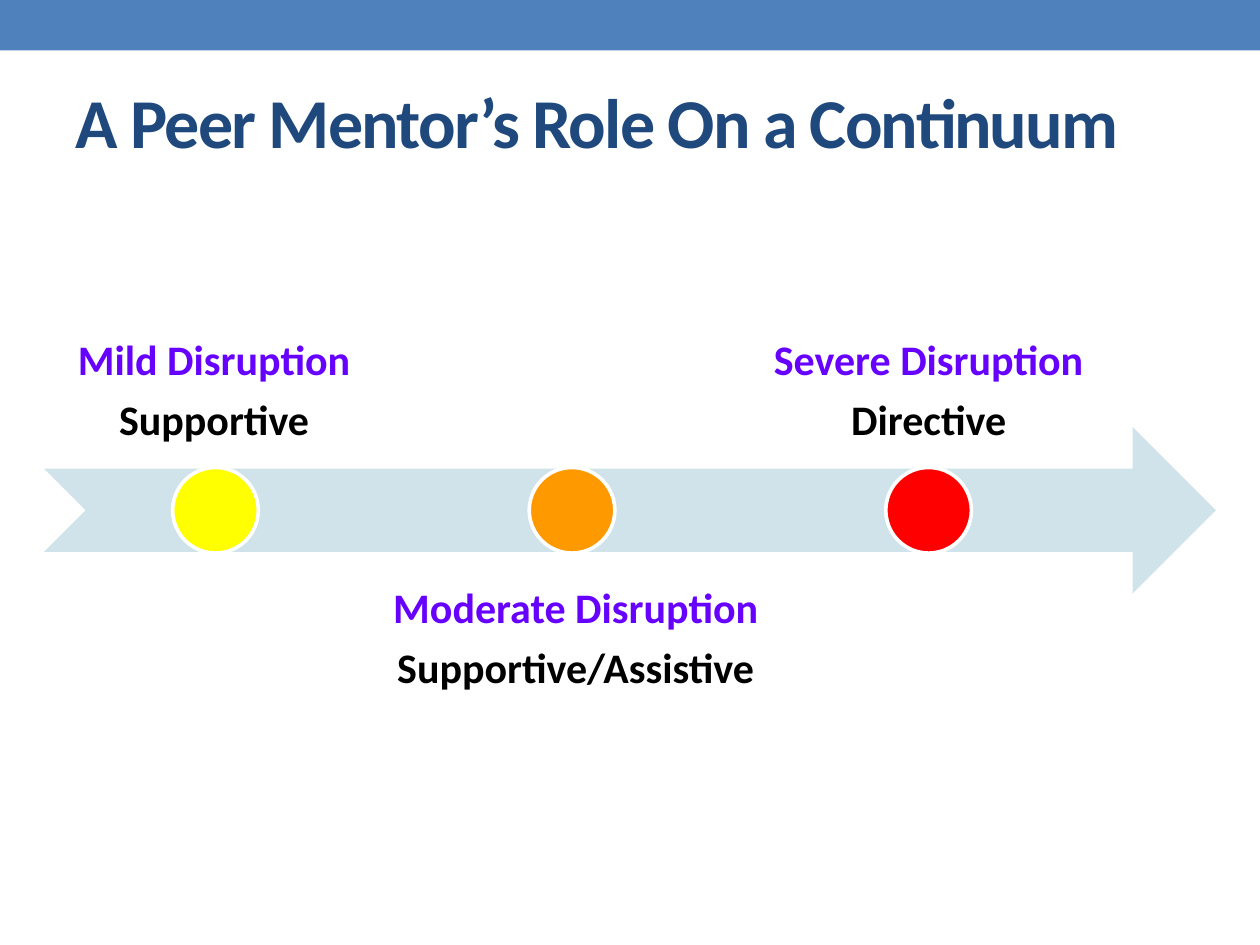
from dataclasses import dataclass, field

from pptx import Presentation
from pptx.dml.color import RGBColor
from pptx.enum.shapes import MSO_SHAPE
from pptx.enum.text import MSO_ANCHOR, MSO_AUTO_SIZE, PP_ALIGN
from pptx.util import Inches, Pt

RECTANGLE, ARROW, DOT = MSO_SHAPE.RECTANGLE, MSO_SHAPE.NOTCHED_RIGHT_ARROW, MSO_SHAPE.OVAL
TOP, MIDDLE, BOTTOM = MSO_ANCHOR.TOP, MSO_ANCHOR.MIDDLE, MSO_ANCHOR.BOTTOM
LEFT, CENTER = PP_ALIGN.LEFT, PP_ALIGN.CENTER
NO_AUTOFIT = MSO_AUTO_SIZE.NONE

WIDTH, HEIGHT = 10, 7.5
COLORS = {
    "band": "4F81BD", "title": "1F497D", "arrow": "D0E3EA", "outline": "FFFFFF",
    "level": "6600FF", "role": "000000",
    "mild": "FFFF00", "moderate": "FF9900", "severe": "FF0000",
}


def apply(target, values):
    for name, value in values.items():
        setattr(target, name, value)


@dataclass
class ContinuumSlide:
    slide: object
    font: str = "Calibri"
    label_format: dict = field(default_factory=lambda: {
        "alignment": CENTER, "line_spacing": 0.9, "space_after": Pt(8.4)})

    def box(self, left, top, width, height):
        return (Inches(left * WIDTH), Inches(top * HEIGHT),
                Inches(width * WIDTH), Inches(height * HEIGHT))

    def color(self, name):
        return RGBColor.from_string(COLORS[name])

    def add_text(self, paragraph, text, size, color):
        run = paragraph.add_run()
        run.text = text
        apply(run.font, {"name": self.font, "size": Pt(size), "bold": True})
        run.font.color.rgb = self.color(color)
        return run

    def title(self, text, area):
        heading = self.slide.shapes.title
        apply(heading, dict(zip(("left", "top", "width", "height"), self.box(*area))))
        apply(heading.text_frame, {
            "vertical_anchor": MIDDLE, "word_wrap": True, "auto_size": NO_AUTOFIT})
        paragraph = heading.text_frame.paragraphs[0]
        paragraph.alignment = LEFT
        run = self.add_text(paragraph, text, 40, "title")
        run._r.get_or_add_rPr().set("spc", "-100")

    def shape(self, kind, area, fill, outline=None):
        figure = self.slide.shapes.add_shape(kind, *self.box(*area))
        figure.shadow.inherit = False
        figure.fill.solid()
        figure.fill.fore_color.rgb = self.color(fill)
        if outline:
            figure.line.color.rgb = self.color(outline)
            figure.line.width = Pt(2.08)
        else:
            figure.line.fill.background()

    def label(self, level, role, area, anchor, inset):
        frame = self.slide.shapes.add_textbox(*self.box(*area)).text_frame
        apply(frame, {"word_wrap": True, "auto_size": NO_AUTOFIT, "vertical_anchor": anchor})
        apply(frame, dict.fromkeys(
            ("margin_left", "margin_top", "margin_right", "margin_bottom"), Inches(inset)))
        for paragraph, text, color in (
                (frame.paragraphs[0], level, "level"), (frame.add_paragraph(), role, "role")):
            apply(paragraph, self.label_format)
            self.add_text(paragraph, text, 24, color)


def main():
    deck = Presentation()
    deck.slide_width, deck.slide_height = Inches(WIDTH), Inches(HEIGHT)
    page = ContinuumSlide(deck.slides.add_slide(deck.slide_layouts[5]))

    page.shape(RECTANGLE, (0, 0, 1, 0.4 / HEIGHT), "band")
    page.title("A Peer Mentor’s Role On a Continuum",
               (0.05, 0.42 / HEIGHT, 0.9, 1.08 / HEIGHT))

    arrow_height = 1.32 / HEIGHT
    arrow_top = 3.39 / HEIGHT
    arrow_middle = arrow_top + arrow_height / 2
    page.shape(ARROW, (0.035, arrow_top, 0.93, arrow_height), "arrow")

    above = (2.4 / HEIGHT, BOTTOM, 0.19)
    below = (4.5 / HEIGHT, TOP, 0.16)
    stages = [
        ("mild", "Mild Disruption", "Supportive", 0.17, 0.27, above),
        ("moderate", "Moderate Disruption", "Supportive/Assistive", 0.457, 0.39, below),
        ("severe", "Severe Disruption", "Directive", 0.737, 0.302, above),
    ]
    first_dot, dot_step = 0.171, 0.283
    dot_width, dot_height = 0.68 / WIDTH, 0.68 / HEIGHT
    for index, (tone, level, role, center, width, (top, anchor, inset)) in enumerate(stages):
        page.label(level, role, (center - width / 2, top, width, arrow_height), anchor, inset)
        dot_left = first_dot + index * dot_step - dot_width / 2
        page.shape(DOT, (dot_left, arrow_middle - dot_height / 2, dot_width, dot_height),
                   tone, "outline")

    deck.save("out.pptx")


if __name__ == "__main__":
    main()
